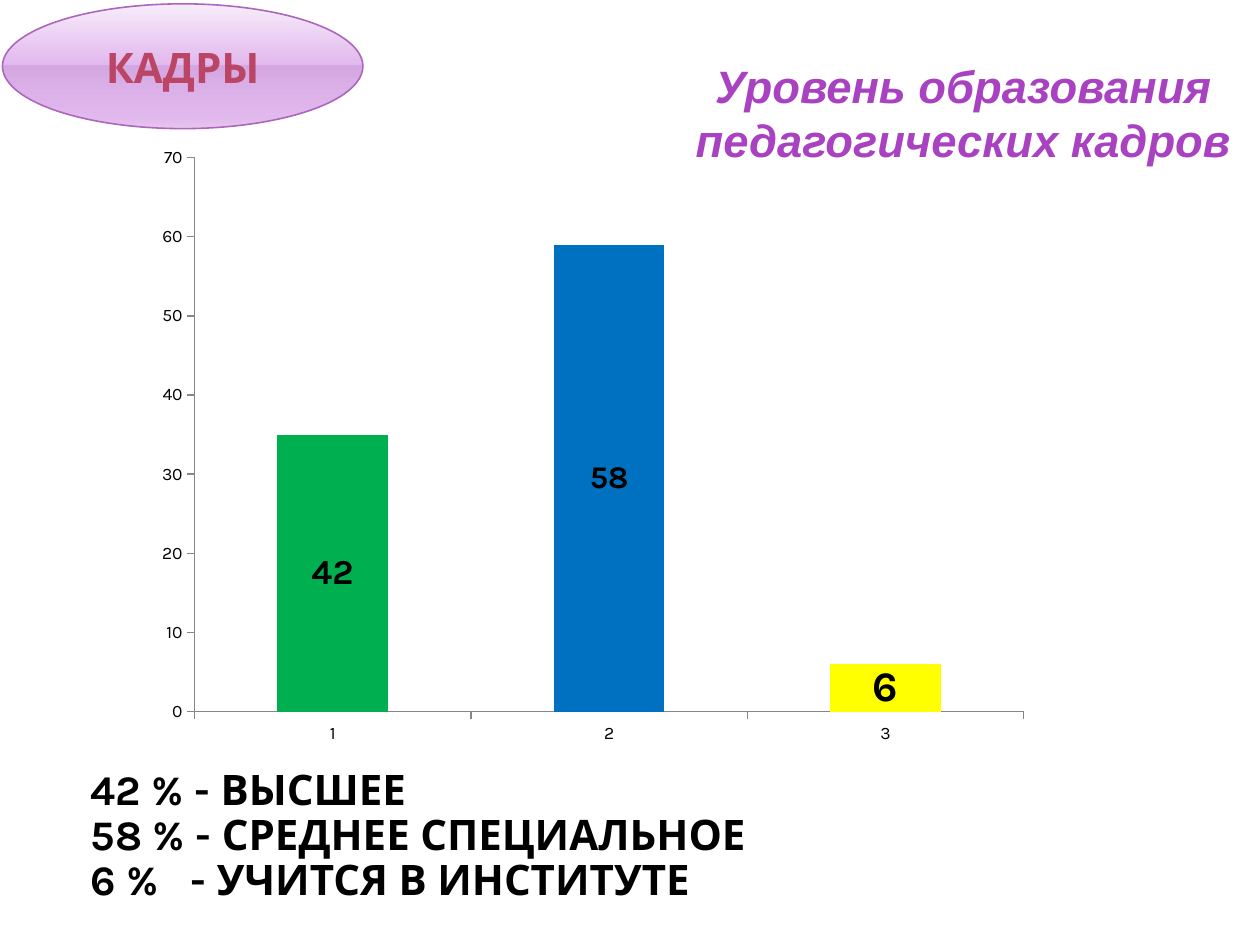
from lxml import etree
from pptx import Presentation
from pptx.chart.data import CategoryChartData
from pptx.dml.color import RGBColor
from pptx.enum import chart as ch, shapes, text
from pptx.oxml.ns import qn
from pptx.util import Pt

COLOURS = {
    "ink": "000000", "axis": "868686", "heading": "A942C1",
    "badge_text": "BA4565", "badge_line": "AC66BB",
    "higher": "00B050", "secondary": "0070C0", "studying": "FFFF00",
}
BADGE_STOPS = [(0, "F7EBFB"), (49, "E2B9ED"), (49, "D5A7E2"), (92, "E2B9ED"), (100, "E6C6EF")]
# colour, bar height, label, label size
LEVELS = [("higher", 35, "42", 20), ("secondary", 59, "58", 18), ("studying", 6, "6", 24)]
SUMMARY = ["42 % - ВЫСШЕЕ", "58 % - СРЕДНЕЕ СПЕЦИАЛЬНОЕ", "6 %\t- УЧИТСЯ В ИНСТИТУТЕ"]


def rgb(name):
    return RGBColor.from_string(COLOURS[name])


def apply(target, values):
    for name, value in values.items():
        setattr(target, name, value)


def style(font, colour, **values):
    apply(font, values)
    font.color.rgb = rgb(colour)


def place(part, box):
    apply(part, dict(zip(("left", "top", "width", "height"), map(Pt, box))))


def frame_format(frame, anchor, left, top, right, bottom):
    apply(frame, {
        "word_wrap": True, "auto_size": text.MSO_AUTO_SIZE.NONE, "vertical_anchor": anchor,
        "margin_left": Pt(left), "margin_top": Pt(top),
        "margin_right": Pt(right), "margin_bottom": Pt(bottom),
    })


def add_summary(title, box):
    place(title, box)
    frame = title.text_frame
    frame_format(frame, text.MSO_ANCHOR.BOTTOM, 3.6, 0, 3.6, 0)
    frame.text = "\n".join(SUMMARY)
    for line in frame.paragraphs:
        apply(line, {"alignment": text.PP_ALIGN.LEFT, "line_spacing": 0.9})
        tabs = etree.SubElement(line._p.get_or_add_pPr(), qn("a:tabLst"))
        etree.SubElement(tabs, qn("a:tab"), pos=str(Pt(57)), algn="l")
        style(line.runs[0].font, "ink", name="Karla", size=Pt(24), bold=True)


def add_heading(body, box):
    place(body, box)
    frame = body.text_frame
    frame_format(frame, text.MSO_ANCHOR.TOP, 7.2, 31, 7.2, 0)
    frame.text = "Уровень образования педагогических кадров"
    line = frame.paragraphs[0]
    apply(line, {"alignment": text.PP_ALIGN.CENTER, "space_before": Pt(0)})
    props = line._p.get_or_add_pPr()
    props.set("marL", str(Pt(21.6)))
    props.set("indent", "0")
    etree.SubElement(props, qn("a:buNone"))
    style(line.runs[0].font, "heading", name="Arial", size=Pt(25.9), bold=True, italic=True)


def set_plot_layout(chart, **fractions):
    """Fix the inner plot area as fractions of the chart box."""
    plot_area = chart._chartSpace.chart.plotArea
    for old in plot_area.findall(qn("c:layout")):
        plot_area.remove(old)
    layout = etree.Element(qn("c:layout"))
    plot_area.insert(0, layout)
    manual = etree.SubElement(layout, qn("c:manualLayout"))
    values = {"layoutTarget": "inner", "xMode": "edge", "yMode": "edge", **fractions}
    for name, value in values.items():
        etree.SubElement(manual, qn(f"c:{name}"), val=str(value))


def add_levels_chart(slide, box):
    data = CategoryChartData()
    data.categories = [str(n + 1) for n in range(len(LEVELS))]
    data.add_series("Series 1", [level[1] for level in LEVELS])
    chart = slide.shapes.add_chart(ch.XL_CHART_TYPE.COLUMN_STACKED, *map(Pt, box), data).chart
    apply(chart, {"has_legend": False, "has_title": False})
    style(chart.font, "ink", name="Karla", size=Pt(10))
    set_plot_layout(chart, x=0.058, y=0.051, w=0.942, h=0.859)

    apply(chart.value_axis, {"minimum_scale": 0, "maximum_scale": 70, "major_unit": 10})
    for axis in (chart.category_axis, chart.value_axis):
        apply(axis, {"has_major_gridlines": False, "major_tick_mark": ch.XL_TICK_MARK.OUTSIDE})
        axis.format.line.color.rgb = rgb("axis")
        axis.format.line.width = Pt(0.75)

    plot = chart.plots[0]
    apply(plot, {"gap_width": 150, "overlap": 100, "vary_by_categories": False})
    series = plot.series[0]
    for index, (colour, _, caption, size) in enumerate(LEVELS):
        point = series.points[index]
        point.format.fill.solid()
        point.format.fill.fore_color.rgb = rgb(colour)
        label = point.data_label
        run = label.text_frame.paragraphs[0].add_run()
        run.text = caption
        style(run.font, "ink", name="Karla", size=Pt(size), bold=True)
        label.position = ch.XL_LABEL_POSITION.CENTER


def add_badge(slide, box):
    badge = slide.shapes.add_shape(shapes.MSO_SHAPE.OVAL, *map(Pt, box))
    badge.shadow.inherit = False
    badge.fill.gradient()
    badge.fill.gradient_angle = 270
    stops = badge._element.spPr.find(f".//{qn('a:gsLst')}")
    for old in list(stops):
        stops.remove(old)
    for position, colour in BADGE_STOPS:
        stop = etree.SubElement(stops, qn("a:gs"), pos=str(position * 1000))
        etree.SubElement(stop, qn("a:srgbClr"), val=colour)
    badge.line.color.rgb = rgb("badge_line")
    badge.line.width = Pt(0.9)
    frame = badge.text_frame
    frame_format(frame, text.MSO_ANCHOR.MIDDLE, 7.2, 3.6, 7.2, 3.6)
    frame.text = "КАДРЫ"
    line = frame.paragraphs[0]
    line.alignment = text.PP_ALIGN.CENTER
    style(line.runs[0].font, "badge_text", name="Karla", size=Pt(24), bold=True)


def main():
    deck = Presentation()
    apply(deck, {"slide_width": Pt(720), "slide_height": Pt(540)})
    slide = deck.slides.add_slide(deck.slide_layouts[1])
    add_summary(slide.shapes.title, (48.2, 434.2, 602, 82.8))
    add_heading(slide.placeholders[1], (360, 2.2, 359.3, 86.4))
    add_levels_chart(slide, (82, 71.3, 503.3, 368.6))
    add_badge(slide, (1.4, 2.2, 206, 71.3))
    deck.save("out.pptx")


if __name__ == "__main__":
    main()
